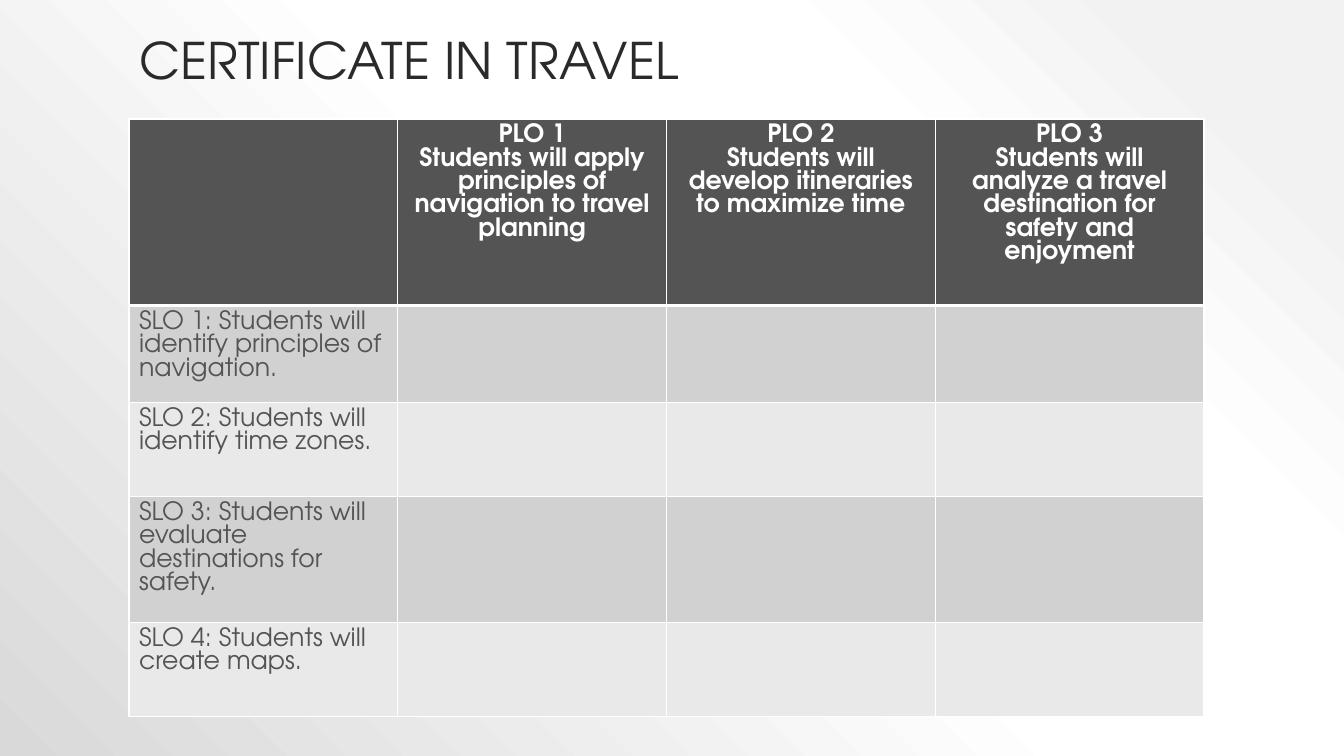
from dataclasses import dataclass

import lxml.etree
import pptx
import pptx.dml.color
import pptx.enum.text
import pptx.oxml.ns
import pptx.util

qn = pptx.oxml.ns.qn
PX = 914400 / 100.8
SLIDE_W, SLIDE_H = 1344, 756


@dataclass(frozen=True)
class Theme:
    font: str = "TeX Gyre Adventor"
    title_size: int = 36
    cell_size: int = 18
    title: str = "2A2A2A"
    dark: str = "545454"
    white: str = "FFFFFF"
    bands: tuple[str, str] = ("D1D1D1", "E9E9E9")
    backdrop: tuple[tuple[int, str], ...] = (
        (10, "F2F2F2"), (28, "FFFFFF"), (48, "FFFFFF"), (100, "D9D9D9"))


@dataclass(frozen=True)
class Row:
    height: int
    texts: tuple[str, ...]


THEME = Theme()
LEFT, CONTENT_W = 129, 1075
ROWS = [
    Row(184, ("",
              "PLO 1\nStudents will apply principles of navigation to travel planning",
              "PLO 2\nStudents will develop itineraries to maximize time",
              "PLO 3\nStudents will analyze a travel destination for safety and enjoyment")),
    Row(97, ("SLO 1: Students will identify principles of navigation.",)),
    Row(94, ("SLO 2: Students will identify time zones.",)),
    Row(126, ("SLO 3: Students will evaluate destinations for safety.",)),
    Row(94, ("SLO 4: Students will create maps.",)),
]


def emu(px: float) -> int:
    return round(px * PX)


def rgb(color: str) -> pptx.dml.color.RGBColor:
    return pptx.dml.color.RGBColor.from_string(color)


def add_color(parent, color: str) -> None:
    lxml.etree.SubElement(parent, qn("a:srgbClr")).set("val", color)


def style_text(p, size: int, color: str, bold: bool = False) -> None:
    for r in p.runs:
        r.font.name = THEME.font
        r.font.size = pptx.util.Pt(size)
        r.font.bold = bold
        r.font.color.rgb = rgb(color)


def set_backdrop(s) -> None:
    """Radial gradient spreading from the top right corner."""
    s.background.fill.gradient()
    grad = s.element.find(".//" + qn("a:gradFill"))
    for child in list(grad):
        grad.remove(child)
    stops = lxml.etree.SubElement(grad, qn("a:gsLst"))
    for position, color in THEME.backdrop:
        stop = lxml.etree.SubElement(stops, qn("a:gs"))
        stop.set("pos", str(position * 1000))
        add_color(stop, color)
    circle = lxml.etree.SubElement(grad, qn("a:path"))
    circle.set("path", "circle")
    focus = lxml.etree.SubElement(circle, qn("a:fillToRect"))
    focus.set("l", "100000")
    focus.set("b", "100000")


def add_title(s, text: str) -> None:
    sp = s.shapes.add_textbox(emu(LEFT + 1), emu(25), emu(CONTENT_W), emu(70))
    tf = sp.text_frame
    tf.word_wrap = True
    tf.vertical_anchor = pptx.enum.text.MSO_ANCHOR.BOTTOM
    tf.text = text
    tf.paragraphs[0].line_spacing = 0.9
    style_text(tf.paragraphs[0], THEME.title_size, THEME.title)


def set_borders(cell, bottom: int) -> None:
    """White lines of 1 pt, with the bottom one in the given width."""
    props = cell._tc.get_or_add_tcPr()
    widths = {"a:lnL": 1, "a:lnR": 1, "a:lnT": 1, "a:lnB": bottom}
    for index, (tag, width) in enumerate(widths.items()):
        line = lxml.etree.Element(qn(tag))
        line.set("w", str(pptx.util.Pt(width)))
        add_color(lxml.etree.SubElement(line, qn("a:solidFill")), THEME.white)
        props.insert(index, line)


def fill_cell(cell, text: str, row: int) -> None:
    header = row == 0
    cell.margin_bottom = 0
    cell.fill.solid()
    cell.fill.fore_color.rgb = rgb(THEME.dark if header else THEME.bands[(row - 1) % 2])
    set_borders(cell, 3 if header else 1)
    if not text:
        return
    cell.text_frame.text = text
    for p in cell.text_frame.paragraphs:
        if header:
            p.alignment = pptx.enum.text.PP_ALIGN.CENTER
        style_text(p, THEME.cell_size, THEME.white if header else THEME.dark, header)


def add_outcome_table(s) -> None:
    columns = len(ROWS[0].texts)
    height = sum(row.height for row in ROWS)
    frame = s.shapes.add_table(len(ROWS), columns, emu(LEFT), emu(119),
                               emu(CONTENT_W), emu(height))
    table = frame.table
    for column in table.columns:
        column.width = emu(CONTENT_W / columns)
    for i, row in enumerate(ROWS):
        table.rows[i].height = emu(row.height)
        for j in range(columns):
            fill_cell(table.cell(i, j), row.texts[j] if j < len(row.texts) else "", i)


def main() -> None:
    prs = pptx.Presentation()
    prs.slide_width, prs.slide_height = emu(SLIDE_W), emu(SLIDE_H)
    s = prs.slides.add_slide(prs.slide_layouts[6])
    set_backdrop(s)
    add_title(s, "CERTIFICATE IN TRAVEL")
    add_outcome_table(s)
    prs.save("out.pptx")


if __name__ == "__main__":
    main()
